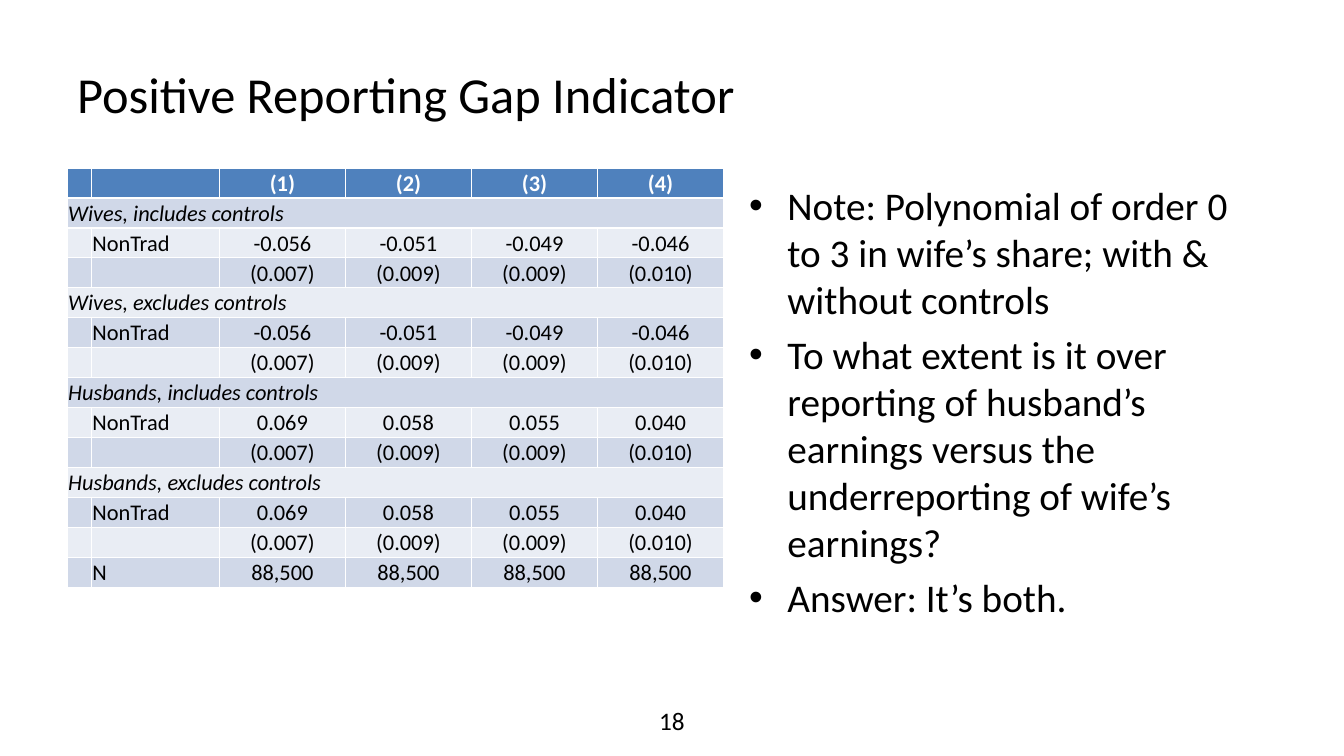
from lxml import etree
from pptx import Presentation
from pptx.dml.color import RGBColor
from pptx.enum.text import MSO_ANCHOR, PP_ALIGN
from pptx.oxml.ns import qn
from pptx.util import Inches, Pt

LEFT, MID = PP_ALIGN.LEFT, PP_ALIGN.CENTER
TOP, CENTER = MSO_ANCHOR.TOP, MSO_ANCHOR.MIDDLE
FONT = "Calibri"
HUES = {"ink": "000000", "white": "FFFFFF", "head": "4F81BD",
        "dark": "D0D8E8", "light": "E9EDF4"}

deck = Presentation()
deck.slide_width, deck.slide_height = Inches(13.33), Inches(7.5)
W, H = deck.slide_width, deck.slide_height
slide = deck.slides.add_slide(deck.slide_layouts[6])


def write(para, text, size, hue="ink", align=LEFT, bold=False, slant=False, dot=False):
    if dot:
        props = para._p.get_or_add_pPr()
        props.set("marL", str(Inches(0.38)))
        props.set("indent", str(-Inches(0.38)))
        etree.SubElement(props, qn("a:buFont")).set("typeface", "Arial")
        etree.SubElement(props, qn("a:buChar")).set("char", "•")
    para.alignment = align
    if not text:
        end = etree.SubElement(para._p, qn("a:endParaRPr"))
        end.set("sz", str(size * 100))
        return
    run = para.add_run()
    run.text = text
    font = run.font
    font.name, font.size, font.bold, font.italic = FONT, Pt(size), bold, slant
    font.color.rgb = RGBColor.from_string(HUES[hue])


def frame(left, top, width, height, anchor=TOP):
    box = slide.shapes.add_textbox(int(left), int(top), int(width), int(height))
    box.text_frame.word_wrap = True
    box.text_frame.vertical_anchor = anchor
    return box.text_frame


col = W / 20
title = frame(col, H * 0.04, 18 * col, H / 6, CENTER)
write(title.paragraphs[0], "Positive Reporting Gap Indicator", 36)

notes = [
    "Note: Polynomial of order 0 to 3 in wife’s share; with & without controls",
    "To what extent is it over reporting of husband’s earnings versus the "
    "underreporting of wife’s earnings?",
    "Answer: It’s both.",
]
body = frame(11 * col, H * 7 / 30, 8 * col, H * 0.61)
for i, note in enumerate(notes):
    para = body.add_paragraph() if i else body.paragraphs[0]
    if i:
        para.space_before = Pt(5.6)
    write(para, note, 28, dot=True)

foot = frame(W * 23 / 60, H * 0.927, W * 7 / 30, H * 0.053)
write(foot.paragraphs[0], "18", 18, align=MID)

gaps = {"Wives": ["-0.056", "-0.051", "-0.049", "-0.046"],
        "Husbands": ["0.069", "0.058", "0.055", "0.040"]}
errors = ["(0.007)", "(0.009)", "(0.009)", "(0.010)"]
rows = [["", "", "(1)", "(2)", "(3)", "(4)"]]
for group, values in gaps.items():
    for mode in ("includes", "excludes"):
        rows += [[f"{group}, {mode} controls"],
                 ["", "NonTrad", *values],
                 ["", "", *errors]]
rows.append(["", "N"] + ["88,500"] * 4)

widths = [0.24, 1.27] + [1.25] * 4
high = H * 5 / 9
table = slide.shapes.add_table(len(rows), len(widths), int(col), int(H * 2 / 9),
                               Inches(sum(widths)), int(high)).table
for part, width in zip(table.columns, widths):
    part.width = Inches(width)

for r, row in enumerate(rows):
    table.rows[r].height = int(high / len(rows))
    fill = "head" if r == 0 else "dark" if r % 2 else "light"
    span = len(row) == 1
    if span:
        table.cell(r, 0).merge(table.cell(r, len(widths) - 1))
    for c, text in enumerate(row):
        cell = table.cell(r, c)
        cell.fill.solid()
        cell.fill.fore_color.rgb = RGBColor.from_string(HUES[fill])
        cell.vertical_anchor = CENTER
        cell.margin_left = cell.margin_right = cell.margin_top = Inches(0.01)
        cell.margin_bottom = 0
        write(cell.text_frame.paragraphs[0], text, 16,
              hue="ink" if r else "white", align=MID if c > 1 else LEFT,
              bold=r == 0, slant=span)

deck.save("out.pptx")
